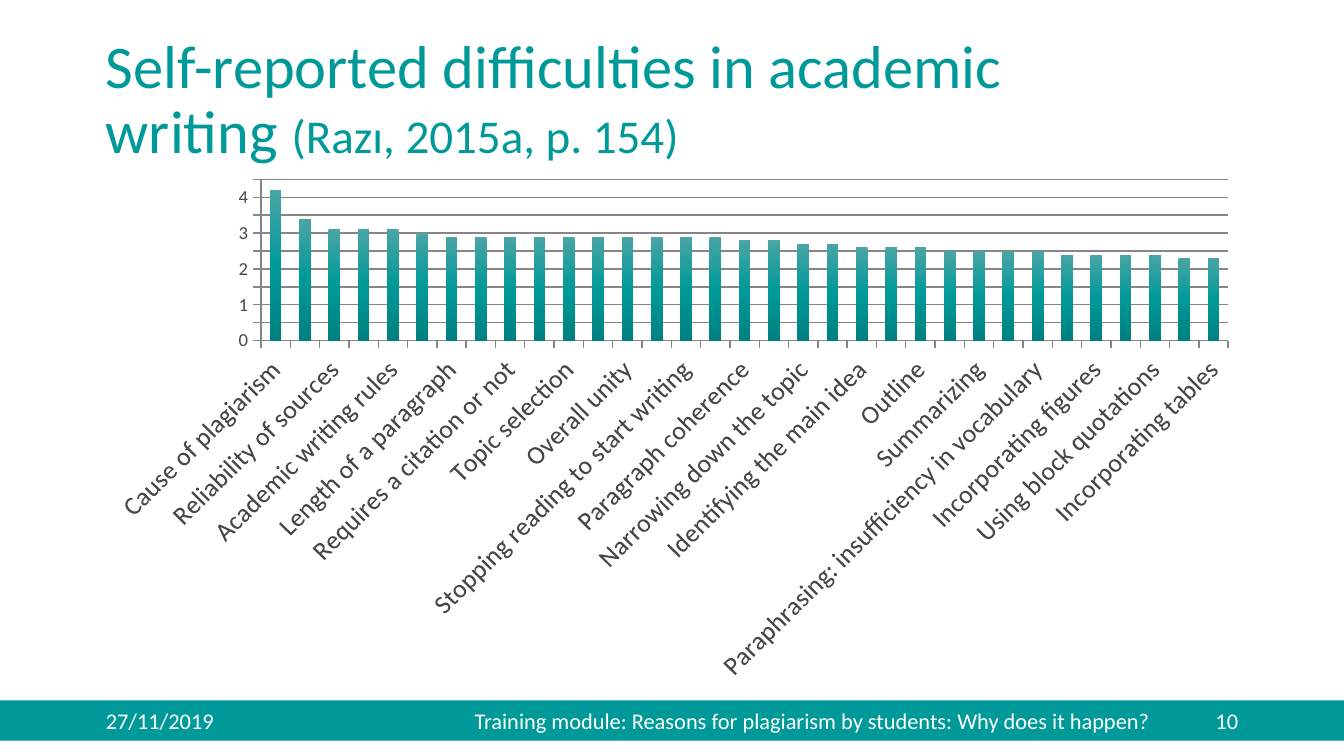
from lxml import etree
from pptx import Presentation
from pptx.chart.data import CategoryChartData
from pptx.dml.color import RGBColor as RGB
from pptx.enum.chart import XL_CHART_TYPE as CT, XL_TICK_MARK as TM
from pptx.enum.shapes import MSO_SHAPE as SHAPE
from pptx.enum.text import MSO_ANCHOR as ANCHOR, PP_ALIGN as AL
from pptx.oxml import parse_xml
from pptx.oxml.ns import nsdecls, qn
from pptx.util import Cm, Pt

# Content
TITLE = [("Self-reported difficulties in academic writing ", "title"),
         ("(Razı, 2015a, p. 154)", "cite")]
DATE = "27/11/2019"
FOOTER = "Training module: Reasons for plagiarism by students: Why does it happen?"
PAGE = "10"
DIFFICULTIES = [
    ("Cause of plagiarism", 4.2),
    ("Paraphrasing: directly quotes", 3.4),
    ("Reliability of sources", 3.1),
    ("Paraphrasing: comprehension", 3.1),
    ("Academic writing rules", 3.1),
    ("Writing complex sentences", 3),
    ("Length of a paragraph", 2.9),
    ("What to integrate into paper", 2.9),
    ("Requires a citation or not", 2.9),
    ("Comprehending sources", 2.9),
    ("Topic selection", 2.9),
    ("Overall coherence", 2.9),
    ("Overall unity", 2.9),
    ("Vocabualry selection", 2.9),
    ("Stopping reading to start writing", 2.9),
    ("Writing the references", 2.9),
    ("Paragraph coherence", 2.8),
    ("Paragraph unity", 2.8),
    ("Narrowing down the topic", 2.7),
    ("Supporting the main idea", 2.7),
    ("Identifying the main idea", 2.6),
    ("Using linking devices", 2.6),
    ("Outline", 2.6),
    ("Why refer to other studies", 2.5),
    ("Summarizing", 2.5),
    ("Use of quotations", 2.5),
    ("Paraphrasing: insufficiency in vocabulary", 2.5),
    ("Headings", 2.4),
    ("Incorporating figures", 2.4),
    ("Paraphrasing: insufficiency in grammar", 2.4),
    ("Using block quotations", 2.4),
    ("Paraphrasing: in-text citation rules", 2.3),
    ("Incorporating tables", 2.3),
]

THEME = {
    "font": "Calibri",
    "teal": "009999", "white": "FFFFFF", "text": "484749", "line": "868686",
    "bar": [(0, "4AA5A5"), (50, "009999"), (100, "008080")],
    "title": 32.4, "cite": 25.2, "footer": 12, "values": 10, "labels": 14,
}

# Layout in centimetres
W, H, MARGIN = 25.4, 14.29, 1.75
BODY_W = W - 2 * MARGIN
BAND_Y, BAND_H, SIDE_W = 13.24, 0.76, 5.72


def color(name):
    return RGB.from_string(THEME[name])


def style(font, size, ink):
    for key, value in {"name": THEME["font"], "size": Pt(THEME[size])}.items():
        setattr(font, key, value)
    font.color.rgb = color(ink)


def add_text(s, box, runs, ink, align=AL.LEFT, spacing=1.0):
    tf = s.shapes.add_textbox(*map(Cm, box)).text_frame
    for key, value in {"word_wrap": True, "vertical_anchor": ANCHOR.MIDDLE}.items():
        setattr(tf, key, value)
    p = tf.paragraphs[0]
    p.alignment, p.line_spacing = align, spacing
    for text, size in runs:
        r = p.add_run()
        r.text = text
        style(r.font, size, ink)


def add_bar_gradient(series):
    series.format.fill.solid()
    solid = series.format.fill._xPr.find(qn("a:solidFill"))
    stops = "".join(f'<a:gs pos="{pos * 1000}"><a:srgbClr val="{rgb}"/></a:gs>'
                    for pos, rgb in THEME["bar"])
    solid.getparent().replace(solid, parse_xml(
        f'<a:gradFill {nsdecls("a")} rotWithShape="1"><a:gsLst>{stops}</a:gsLst>'
        '<a:lin ang="5400000" scaled="0"/></a:gradFill>'))


def add_difficulty_chart(s):
    data = CategoryChartData(number_format="General")
    data.categories = [name for name, _ in DIFFICULTIES]
    data.add_series("Series 1", [score for _, score in DIFFICULTIES])
    box = (MARGIN, 3.2, BODY_W, 9.68)
    chart = s.shapes.add_chart(CT.COLUMN_STACKED, *map(Cm, box), data).chart
    chart.has_legend = chart.has_title = False
    style(chart.font, "values", "text")

    plot = chart.plots[0]
    for key, value in {"gap_width": 150, "overlap": 100, "vary_by_categories": False}.items():
        setattr(plot, key, value)
    add_bar_gradient(plot.series[0])

    cat, val = chart.category_axis, chart.value_axis
    for key, value in {"minimum_scale": 0, "maximum_scale": 4.5, "major_unit": 0.5,
                       "has_major_gridlines": True}.items():
        setattr(val, key, value)
    for axis, size in ((cat, "labels"), (val, "values")):
        axis.major_tick_mark, axis.minor_tick_mark = TM.OUTSIDE, TM.NONE
        style(axis.tick_labels.font, size, "text")
    for line in (cat.format.line, val.format.line, val.major_gridlines.format.line):
        line.color.rgb = color("line")

    # Slanted labels, one for every second column
    cat._element.find(qn("c:txPr")).find(qn("a:bodyPr")).set("rot", "-2700000")
    skip = etree.Element(qn("c:tickLblSkip"))
    skip.set("val", "2")
    cat._element.find(qn("c:noMultiLvlLbl")).addprevious(skip)


def main():
    prs = Presentation()
    prs.slide_width, prs.slide_height = Cm(W), Cm(H)
    s = prs.slides.add_slide(prs.slide_layouts[6])

    # Footer band
    sp = s.shapes.add_shape(SHAPE.RECTANGLE, *map(Cm, (0, BAND_Y, W, BAND_H)))
    sp.shadow.inherit = False
    sp.fill.solid()
    sp.fill.fore_color.rgb = color("teal")
    sp.line.fill.background()

    # Title and chart
    add_text(s, (MARGIN, 0.76, 19.2, 2.31), TITLE, "teal", spacing=0.9)
    add_difficulty_chart(s)

    # Footer texts
    for x, w, text, align in (
        (MARGIN, SIDE_W, DATE, AL.LEFT),
        (8.41, 13.89, FOOTER, AL.CENTER),
        (W - MARGIN - SIDE_W, SIDE_W, PAGE, AL.RIGHT),
    ):
        add_text(s, (x, BAND_Y, w, BAND_H), [(text, "footer")], "white", align)

    prs.save("out.pptx")


if __name__ == "__main__":
    main()
